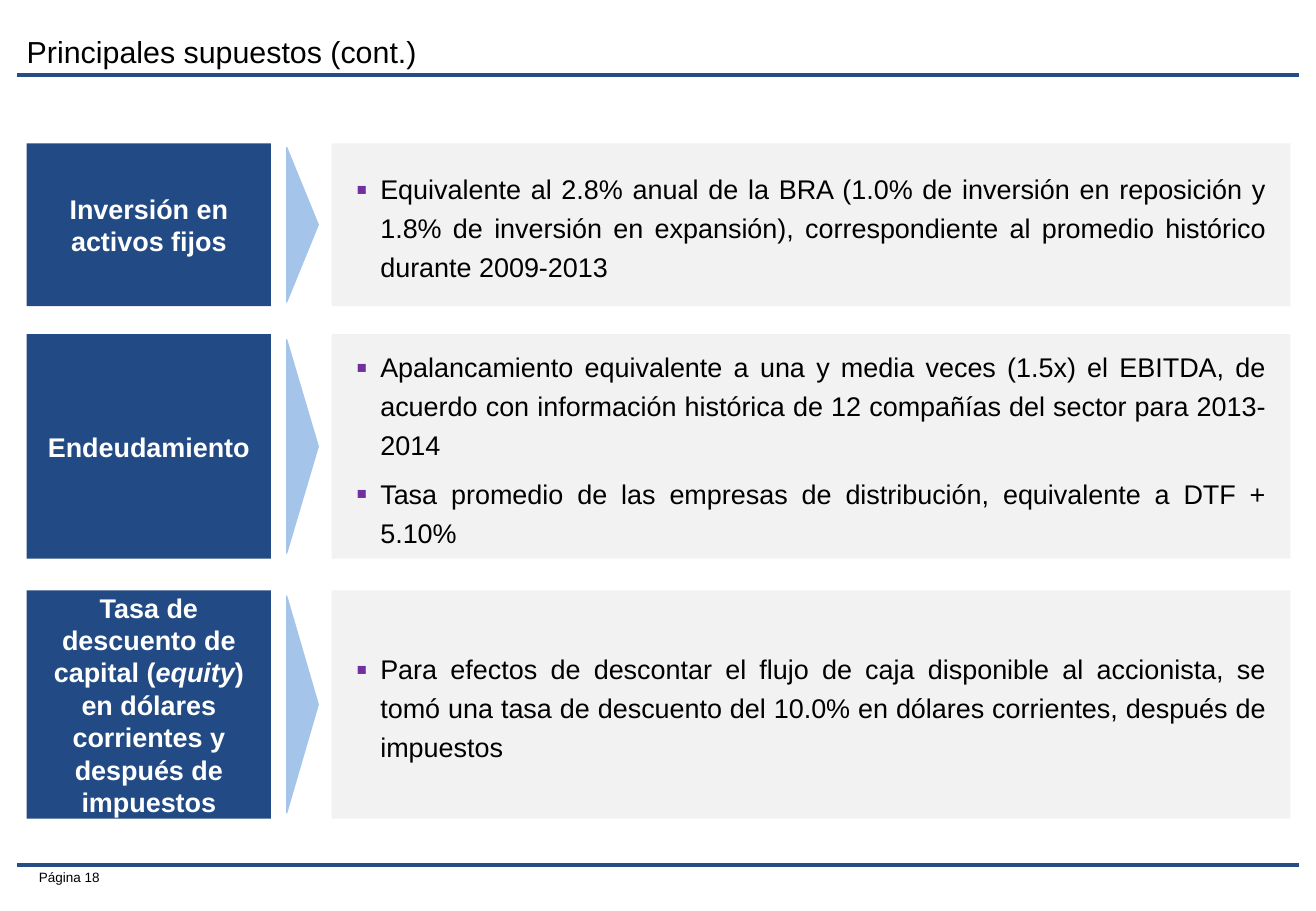
import lxml.etree
import pptx
import pptx.dml.color
import pptx.enum.shapes
import pptx.enum.text
import pptx.oxml
import pptx.oxml.ns
import pptx.util

Inches = pptx.util.Inches
Pt = pptx.util.Pt
ALIGN = pptx.enum.text.PP_ALIGN
ANCHOR = pptx.enum.text.MSO_ANCHOR
SHAPES = pptx.enum.shapes.MSO_SHAPE

COLORS = {"rule": "264E84", "label": "224A84", "arrow": "A5C4E9", "panel": "F2F2F2",
          "bullet": "7030A0", "text": "000000", "white": "FFFFFF"}
WIDTH, HEIGHT = 10.83, 7.5
MARGIN = 0.14
LABEL_LEFT, LABEL_WIDTH = 0.22, 2.01
ARROW_CENTER, ARROW_DEPTH, ARROW_SHARE = 2.49, 0.26, 0.95
PANEL_LEFT, PANEL_WIDTH = 2.73, 7.89

ROWS = [
    (1.18, 1.34, [("Inversión en activos fijos", False)],
     ["Equivalente al 2.8% anual de la BRA (1.0% de inversión en reposición y 1.8% de "
      "inversión en expansión), correspondiente al promedio histórico durante 2009-2013"]),
    (2.75, 1.85, [("Endeudamiento", False)],
     ["Apalancamiento equivalente a una y media veces (1.5x) el EBITDA, de acuerdo con "
      "información histórica de 12 compañías del sector para 2013-2014",
      "Tasa promedio de las empresas de distribución, equivalente a DTF + 5.10%"]),
    (4.86, 1.88, [("Tasa de descuento de capital (", False), ("equity", True),
                  (") en dólares corrientes y después de impuestos", False)],
     ["Para efectos de descontar el flujo de caja disponible al accionista, se tomó una "
      "tasa de descuento del 10.0% en dólares corrientes, después de impuestos"]),
]


def add_run(paragraph, text, size, color, bold=False, italic=False):
    run = paragraph.add_run()
    run.text = text
    run.font.name = "Arial"
    run.font.size = Pt(size)
    run.font.bold = bold
    run.font.italic = italic
    run.font.color.rgb = pptx.dml.color.RGBColor.from_string(COLORS[color])


def set_frame(frame, inset_x, inset_y, anchor, wrap=True):
    frame.auto_size = pptx.enum.text.MSO_AUTO_SIZE.NONE
    frame.word_wrap = wrap
    frame.vertical_anchor = anchor
    frame.margin_left = frame.margin_right = Inches(inset_x)
    frame.margin_top = frame.margin_bottom = Inches(inset_y)


deck = pptx.Presentation()
deck.slide_width, deck.slide_height = Inches(WIDTH), Inches(HEIGHT)
slide = deck.slides.add_slide(deck.slide_layouts.get_by_name("Comparison"))

for rule_y in (0.62, 7.12):
    rule = slide.shapes.add_connector(
        pptx.enum.shapes.MSO_CONNECTOR.STRAIGHT,
        Inches(MARGIN), Inches(rule_y), Inches(WIDTH - MARGIN), Inches(rule_y))
    rule.line.color.rgb = pptx.dml.color.RGBColor.from_string(COLORS["rule"])
    rule.line.width = Pt(2.25)
    lxml.etree.SubElement(rule._element.spPr, pptx.oxml.ns.qn("a:effectLst"))

page_number = slide.shapes.add_textbox(Inches(MARGIN), Inches(7.1), Inches(0.78), Inches(0.24))
set_frame(page_number.text_frame, 0.1, 0.05, ANCHOR.MIDDLE, wrap=False)
page_line = page_number.text_frame.paragraphs[0]
page_line.alignment = ALIGN.RIGHT
add_run(page_line, "Página 18", 8, "text")

heading = slide.shapes.title
heading.left, heading.top = Inches(LABEL_LEFT), Inches(0.29)
heading.width, heading.height = Inches(9.16), Inches(0.5)
set_frame(heading.text_frame, 0, 0.04, ANCHOR.TOP)
heading_line = heading.text_frame.paragraphs[0]
heading_line.alignment = ALIGN.LEFT
heading_line.line_spacing = 0.8
add_run(heading_line, "Principales supuestos (cont.)", 18, "text")

*panels, spare = [p for p in slide.placeholders if p.placeholder_format.idx in (1, 2, 3, 4)]
spare._element.getparent().remove(spare._element)

for (top, height, topic, assumptions), panel in zip(ROWS, panels):
    label = slide.shapes.add_shape(SHAPES.RECTANGLE, Inches(LABEL_LEFT), Inches(top),
                                   Inches(LABEL_WIDTH), Inches(height))
    label.shadow.inherit = False
    label.fill.solid()
    label.fill.fore_color.rgb = pptx.dml.color.RGBColor.from_string(COLORS["label"])
    label.line.fill.background()
    set_frame(label.text_frame, 0.1, 0.1, ANCHOR.MIDDLE)
    topic_line = label.text_frame.paragraphs[0]
    topic_line.alignment = ALIGN.CENTER
    for text, italic in topic:
        add_run(topic_line, text, 16, "white", bold=True, italic=italic)

    span = height * ARROW_SHARE
    arrow = slide.shapes.add_shape(
        SHAPES.FLOWCHART_MERGE, Inches(ARROW_CENTER - span / 2),
        Inches(top + height / 2 - ARROW_DEPTH / 2), Inches(span), Inches(ARROW_DEPTH))
    arrow.rotation = 270
    arrow.shadow.inherit = False
    arrow.fill.solid()
    arrow.fill.fore_color.rgb = pptx.dml.color.RGBColor.from_string(COLORS["arrow"])
    arrow.line.color.rgb = pptx.dml.color.RGBColor.from_string(COLORS["arrow"])
    arrow.line.width = Pt(0.75)

    panel.left, panel.top = Inches(PANEL_LEFT), Inches(top)
    panel.width, panel.height = Inches(PANEL_WIDTH), Inches(height)
    panel.fill.solid()
    panel.fill.fore_color.rgb = pptx.dml.color.RGBColor.from_string(COLORS["panel"])
    set_frame(panel.text_frame, 0.2, 0.12, ANCHOR.MIDDLE)
    for number, assumption in enumerate(assumptions):
        item = panel.text_frame.add_paragraph() if number else panel.text_frame.paragraphs[0]
        item.alignment = ALIGN.JUSTIFY
        item.line_spacing = 1.2
        item.space_before, item.space_after = Pt(0), Pt(6)
        props = item._p.get_or_add_pPr()
        props.set("marL", str(Inches(0.2)))
        props.set("indent", str(-Inches(0.2)))
        color = lxml.etree.SubElement(props, pptx.oxml.ns.qn("a:buClr"))
        lxml.etree.SubElement(color, pptx.oxml.ns.qn("a:srgbClr"), val=COLORS["bullet"])
        lxml.etree.SubElement(props, pptx.oxml.ns.qn("a:buSzPct"), val="120000")
        lxml.etree.SubElement(props, pptx.oxml.ns.qn("a:buFont"), typeface="Arial")
        lxml.etree.SubElement(props, pptx.oxml.ns.qn("a:buChar"), char="▪")
        add_run(item, assumption, 16, "text")

deck.save("out.pptx")
